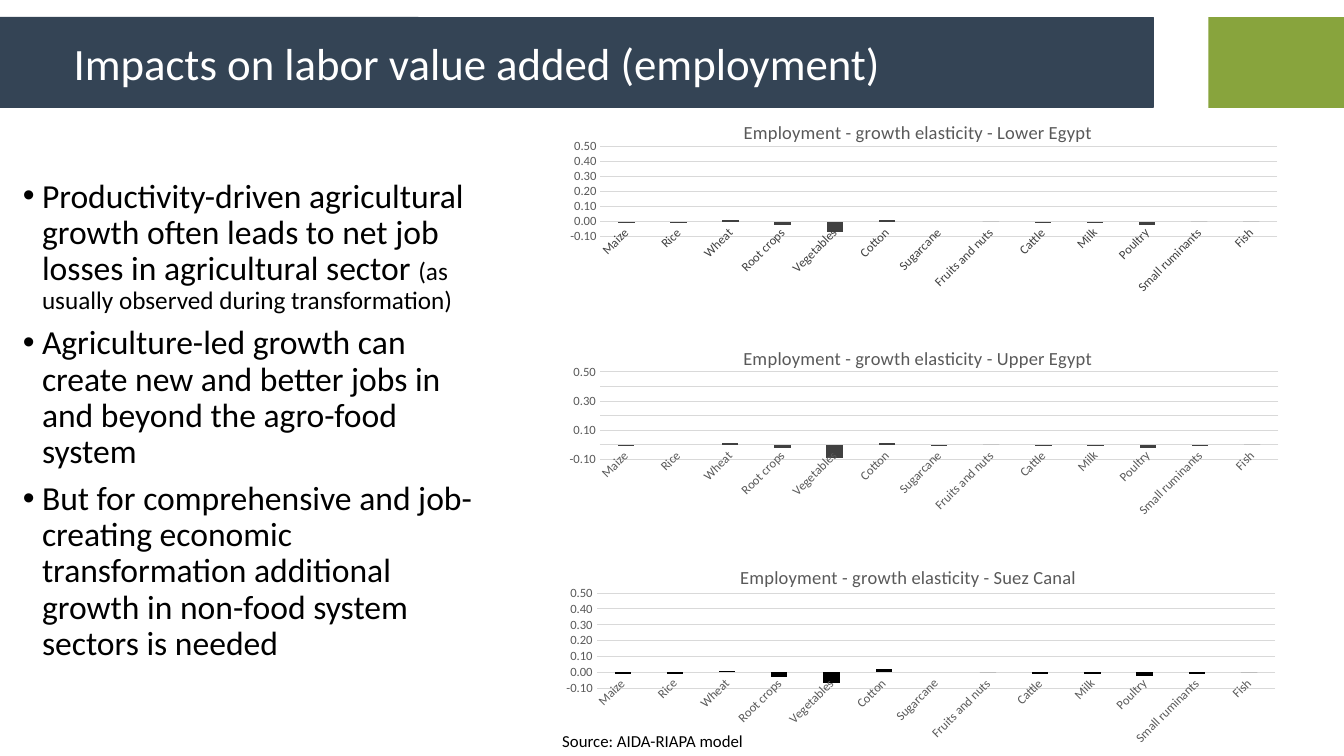
from lxml import etree
from pptx import Presentation
from pptx.chart.data import CategoryChartData
from pptx.dml.color import RGBColor
from pptx.enum.chart import XL_CHART_TYPE, XL_TICK_MARK
from pptx.enum.shapes import MSO_SHAPE
from pptx.enum.text import MSO_ANCHOR, PP_ALIGN
from pptx.oxml import parse_xml
from pptx.oxml.ns import nsdecls, qn
from pptx.util import Cm, Pt

COLOURS = {"navy": "344455", "green": "88A43D", "white": "FFFFFF", "black": "000000",
           "dark": "404040", "grey": "595959", "grid": "D9D9D9"}


def style(font, size, colour):
    values = {"name": "Calibri", "size": Pt(size), "bold": False}
    for name, value in values.items():
        setattr(font, name, value)
    font.color.rgb = RGBColor.from_string(COLOURS[colour])


def place(parent, index, **fractions):
    """Give a chart part a manual layout, in fractions of the chart."""
    for old in parent.findall(qn("c:layout")):
        parent.remove(old)
    layout = parse_xml(f"<c:layout {nsdecls('c')}><c:manualLayout/></c:layout>")
    settings = {"xMode": "edge", "yMode": "edge", **fractions}
    if "w" in fractions:
        settings = {"layoutTarget": "inner", **settings}
    for name, value in settings.items():
        etree.SubElement(layout[0], qn(f"c:{name}")).set("val", str(value))
    parent.insert(index, layout)


deck = Presentation()
deck.slide_width, deck.slide_height = Cm(33.87), Cm(19.05)
page = deck.slides.add_slide(deck.slide_layouts[5])

# Header bars and title
for left, width, corner, colour in [(-0.56, 29.64, 0.01, "navy"), (30.45, 4.27, 0, "green")]:
    bar = page.shapes.add_shape(MSO_SHAPE.ROUNDED_RECTANGLE, Cm(left), Cm(0.43), Cm(width), Cm(2.29))
    bar.adjustments[0] = corner
    bar.shadow.inherit = False
    bar.fill.solid()
    bar.fill.fore_color.rgb = RGBColor.from_string(COLOURS[colour])
    bar.line.fill.background()

title = page.shapes.title
page.shapes._spTree.append(title._element)
title.left, title.top, title.width, title.height = Cm(1.6), Cm(0), Cm(26.59), Cm(3.3)
title.text_frame.text = "Impacts on labor value added (employment)"
title.text_frame.vertical_anchor = MSO_ANCHOR.MIDDLE
para = title.text_frame.paragraphs[0]
para.alignment = PP_ALIGN.LEFT
para.line_spacing = 0.9
style(para.runs[0].font, 32, "white")

# Messages
messages = [
    [("Productivity-driven agricultural growth often leads to net job losses in agricultural sector ", 24),
     ("(as usually observed during transformation)", 18)],
    [("Agriculture-led growth can create new and better jobs in and beyond the agro-food system", 24)],
    [("But for comprehensive and job-creating economic transformation additional growth "
      "in non-food system sectors is needed", 24)],
]
box = page.shapes.add_textbox(Cm(0.33), Cm(4.39), Cm(12.32), Cm(13.82))
box.text_frame.word_wrap = True
for number, message in enumerate(messages):
    para = box.text_frame.add_paragraph() if number else box.text_frame.paragraphs[0]
    para.line_spacing = 0.9
    if number:
        para.space_before = Pt(7.5)
    properties = para._p.get_or_add_pPr()
    properties.set("marL", str(Cm(0.48)))
    properties.set("indent", str(Cm(-0.48)))
    etree.SubElement(properties, qn("a:buFont")).set("typeface", "Arial")
    etree.SubElement(properties, qn("a:buChar")).set("char", "•")
    for text, size in message:
        span = para.add_run()
        span.text = text
        style(span.font, size, "black")

source = page.shapes.add_textbox(Cm(13.92), Cm(18.29), Cm(5.13), Cm(0.76))
source.text_frame.word_wrap = False
source.text_frame.text = "Source: AIDA-RIAPA model"
style(source.text_frame.paragraphs[0].runs[0].font, 12, "black")

# One chart per region
products = ["Maize", "Rice", "Wheat", "Root crops", "Vegetables", "Cotton", "Sugarcane",
            "Fruits and nuts", "Cattle", "Milk", "Poultry", "Small ruminants", "Fish"]
regions = [
    ("Lower Egypt", (14.02, 2.51, 18.54, 5.16), (0.23, 0.44), "dark", "dark",
     [-0.01, -0.01, 0.01, -0.02, -0.07, 0.01, None, 0, -0.01, -0.01, -0.02, 0, 0]),
    ("Upper Egypt", (14, 8.2, 18.59, 5.11), (0.23, 0.43), "dark", "grey",
     [-0.01, None, 0.01, -0.02, -0.09, 0.01, -0.01, 0, -0.01, -0.01, -0.02, -0.01, 0]),
    ("Suez Canal", (13.92, 13.72, 18.59, 5.33), (0.23, 0.45), "black", "grey",
     [-0.01, -0.01, 0.01, -0.03, -0.07, 0.02, None, 0, -0.01, -0.01, -0.02, -0.01, 0]),
]
for region, frame, (plot_top, plot_height), bar_colour, label_colour, elasticities in regions:
    data = CategoryChartData(number_format="0.00")
    data.categories = products
    data.add_series("Series 1", elasticities)
    chart = page.shapes.add_chart(XL_CHART_TYPE.COLUMN_CLUSTERED, *map(Cm, frame), data).chart
    style(chart.font, 10, "black")
    chart.has_legend = False

    heading = chart.chart_title
    heading.text_frame.text = f"Employment - growth elasticity - {region}"
    style(heading.text_frame.paragraphs[0].runs[0].font, 13.2, "grey")
    heading.include_in_layout = False
    place(heading._element, 1, x=0.25, y=0.08)
    place(chart._chartSpace.chart.plotArea, 0, x=0.06, y=plot_top, w=0.92, h=plot_height)

    plot = chart.plots[0]
    plot.gap_width, plot.overlap, plot.vary_by_categories = 219, -27, False
    series = plot.series[0]
    series.invert_if_negative = False
    series.format.fill.solid()
    series.format.fill.fore_color.rgb = RGBColor.from_string(COLOURS[bar_colour])

    value_axis, product_axis = chart.value_axis, chart.category_axis
    for axis, colour in [(value_axis, "grey"), (product_axis, label_colour)]:
        axis.major_tick_mark = axis.minor_tick_mark = XL_TICK_MARK.NONE
        style(axis.tick_labels.font, 9, colour)
    scale = {"minimum_scale": -0.1, "maximum_scale": 0.5, "major_unit": 0.1, "has_major_gridlines": True}
    for name, value in scale.items():
        setattr(value_axis, name, value)
    value_axis.tick_labels.number_format = "0.00"
    value_axis.tick_labels.number_format_is_linked = False
    value_axis.format.line.fill.background()
    for line in (value_axis.major_gridlines.format.line, product_axis.format.line):
        line.color.rgb = RGBColor.from_string(COLOURS["grid"])
        line.width = Pt(0.75)
    product_axis._element.find(qn("c:txPr")).find(qn("a:bodyPr")).set("rot", "-2700000")

deck.save("out.pptx")
